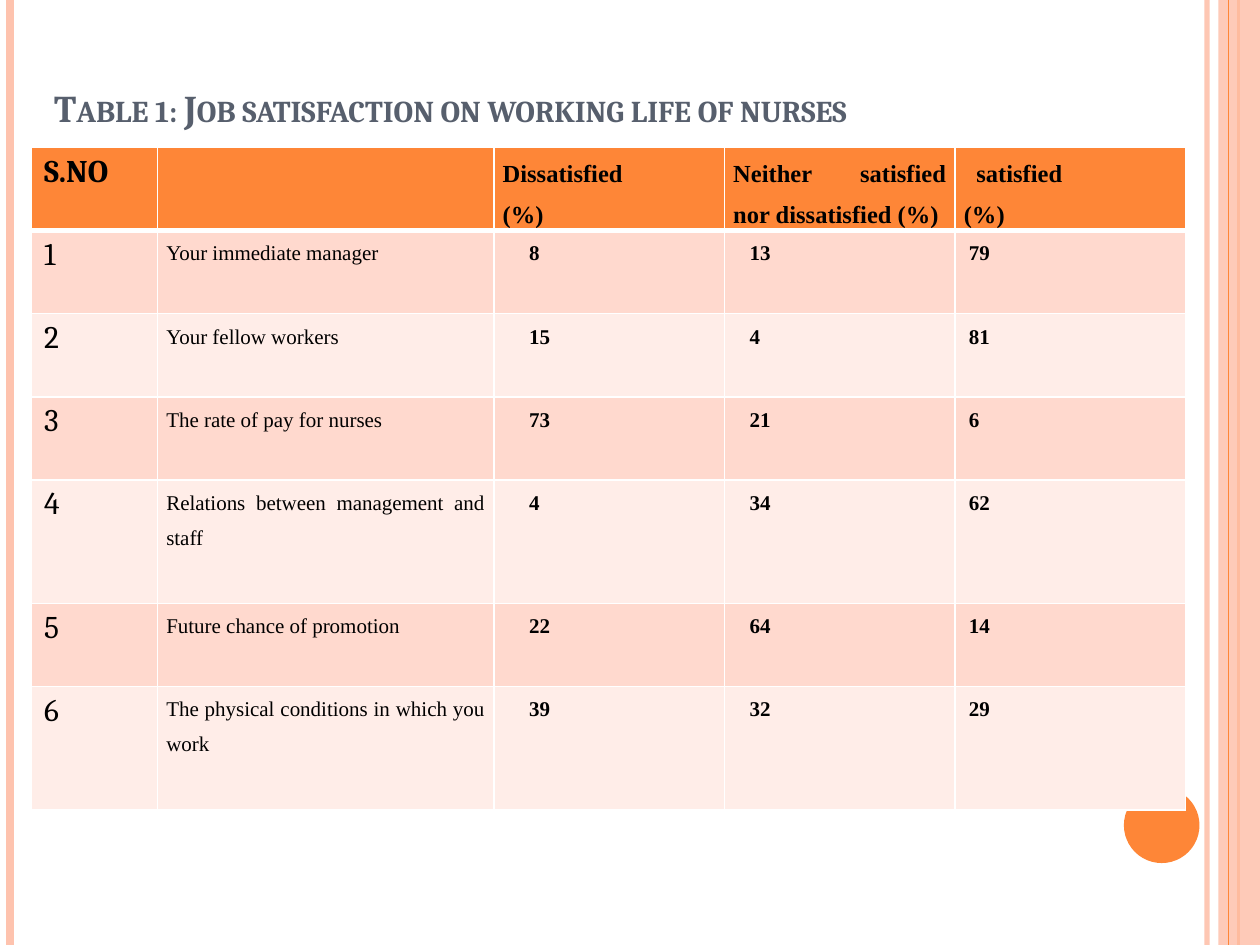
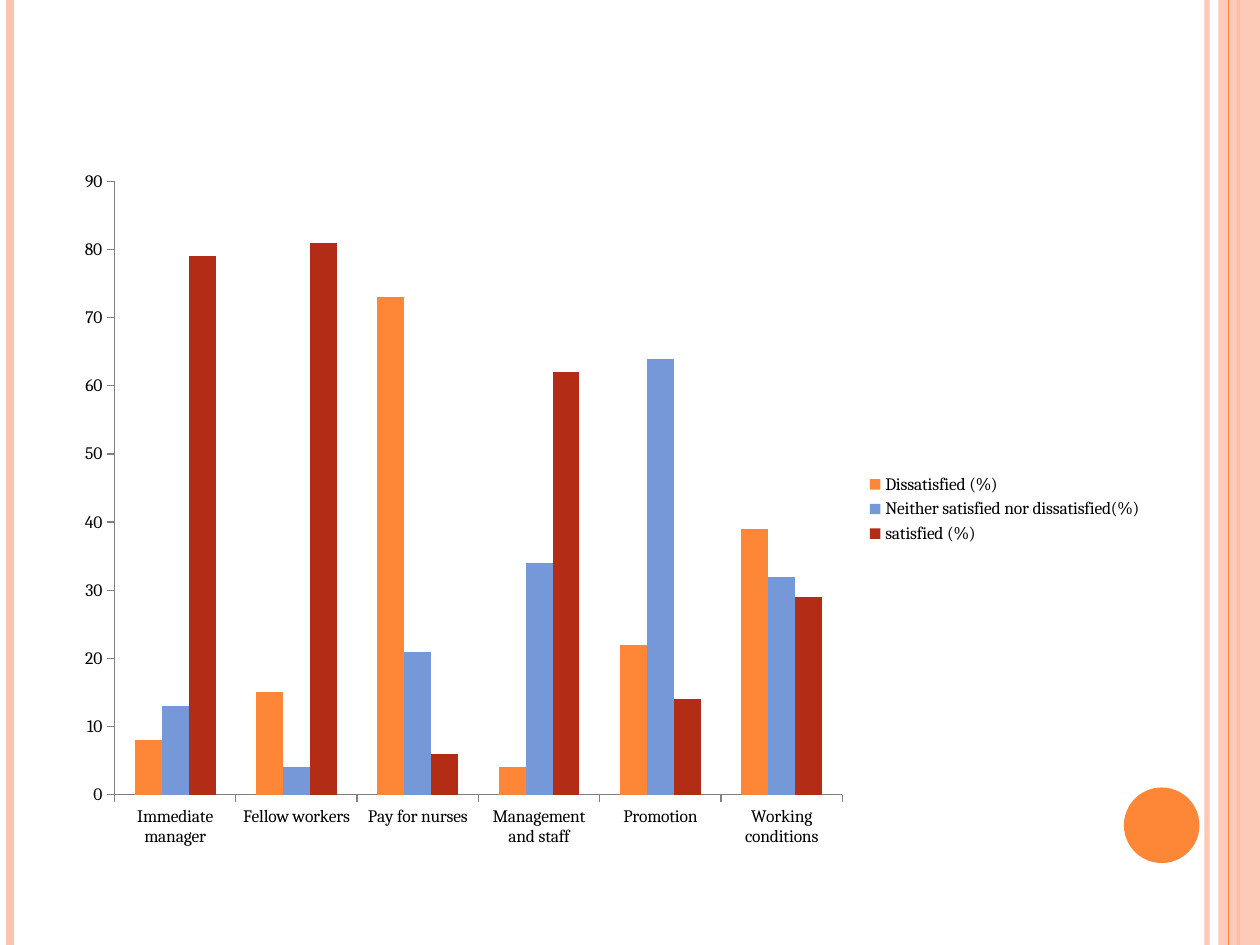
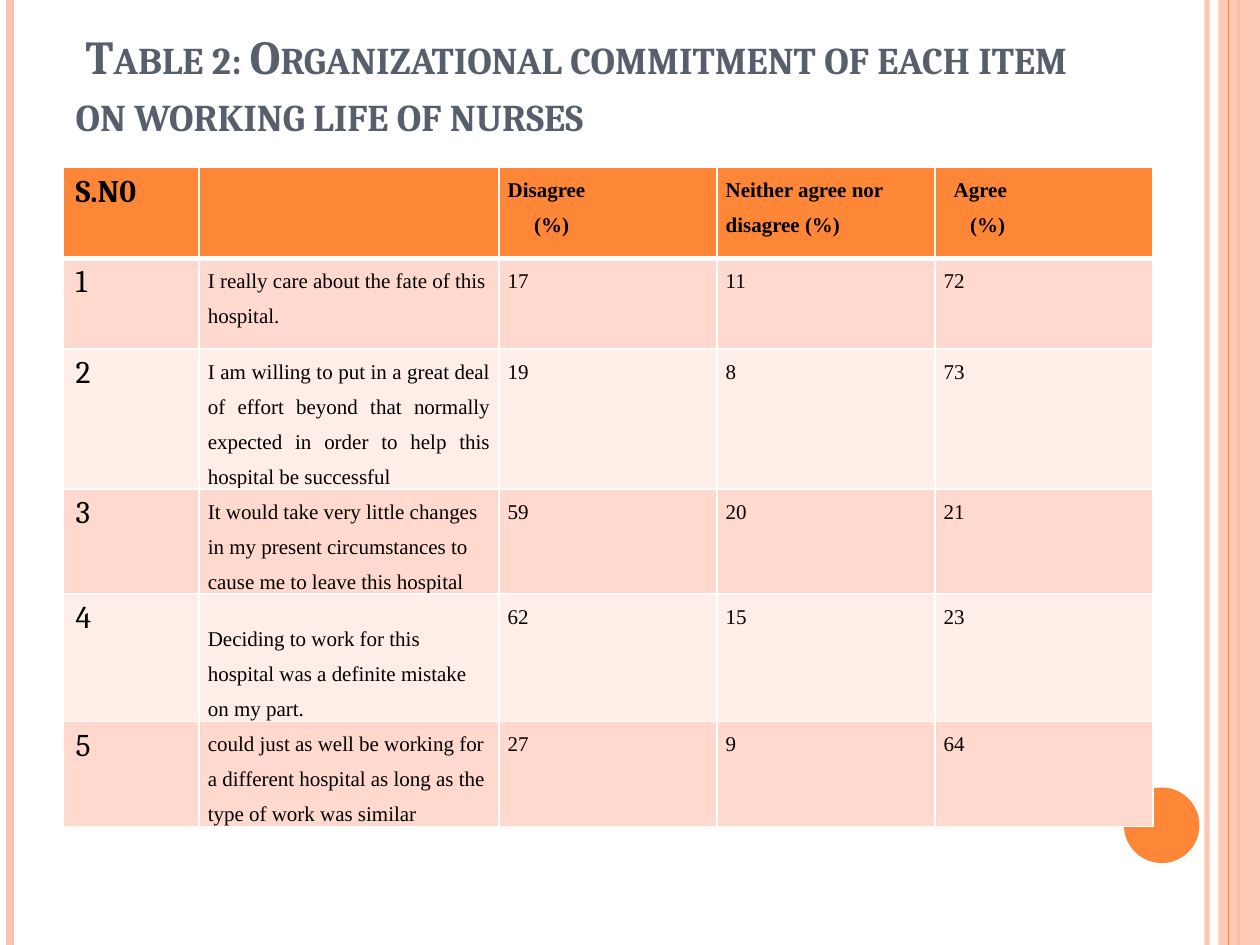
from lxml import etree
from pptx import Presentation
from pptx import util as u
from pptx.chart import data as chart_data
from pptx.dml import color
from pptx.enum import chart as charts
from pptx.enum import shapes, text
from pptx.oxml import ns

ORANGE, PEACH, SLATE = "FE8637", "FEC3AE", "575F6D"
BLUE, RED, GREY = "7598D9", "B32C16", "808080"
WHITE, BLACK = "FFFFFF", "000000"
ROW_FILLS = ("FFD9CE", "FFEDE8")
HEADING_FONT, TABLE_FONT = "Cambria", "Times New Roman"
TITLE_ONLY, BLANK = 5, 6

# Survey results: statement, short name, percentages
SATISFACTION = [
    ("Your immediate manager", "Immediate manager", (8, 13, 79)),
    ("Your fellow workers", "Fellow workers", (15, 4, 81)),
    ("The rate of pay for nurses", "Pay for nurses", (73, 21, 6)),
    ("Relations between management and staff", "Management and staff", (4, 34, 62)),
    ("Future chance of promotion", "Promotion", (22, 64, 14)),
    ("The physical conditions in which you work", "Working conditions", (39, 32, 29)),
]
COMMITMENT = [
    ("I really care about the fate of this hospital.", (17, 11, 72)),
    ("I am willing to put in a great deal of effort beyond that normally "
     "expected in order to help this hospital be successful", (19, 8, 73)),
    ("It would take very little changes in my present circumstances to "
     "cause me to leave this hospital", (59, 20, 21)),
    ("Deciding to work for this hospital was a definite mistake on my part.",
     (62, 15, 23)),
    ("could just as well be working for a different hospital as long as the "
     "type of work was similar", (27, 9, 64)),
]


def rgb(value):
    return color.RGBColor.from_string(value)


def set_alpha(element, percent):
    for solid in element.iter(ns.qn("a:srgbClr")):
        etree.SubElement(solid, ns.qn("a:alpha")).set("val", str(percent * 1000))


def set_font(font, name, size, fill=BLACK, bold=False):
    font.name, font.size, font.bold = name, u.Pt(size), bold
    font.color.rgb = rgb(fill)


def set_indent(paragraph, inches):
    properties = paragraph._p.get_or_add_pPr()
    properties.set("marL", "0")
    properties.set("indent", str(u.Inches(inches)))


class Deck:
    def __init__(self):
        self.presentation = Presentation()
        self.presentation.slide_width = u.Inches(10)
        self.presentation.slide_height = u.Inches(7.5)
        self.slide = None

    def start(self, layout):
        layouts = self.presentation.slide_layouts
        self.slide = self.presentation.slides.add_slide(layouts[layout])
        self.slide.background.fill.solid()
        self.slide.background.fill.fore_color.rgb = rgb(WHITE)
        # Side bands and the disc
        self.vertical_line(9.58, PEACH, 3, 93)
        self.vertical_line(0.08, PEACH, 4.5)
        self.vertical_line(9.83, ORANGE, 1.5)
        self.shape(shapes.MSO_SHAPE.RECTANGLE, 9.67, 0, 0.33, 7.5, PEACH, 87)
        self.vertical_line(9.75, ORANGE, 0.75)
        self.shape(shapes.MSO_SHAPE.OVAL, 8.92, 6.25, 0.6, 0.6, ORANGE)

    def vertical_line(self, x, fill, width, alpha=100):
        line = self.slide.shapes.add_connector(
            shapes.MSO_CONNECTOR.STRAIGHT,
            u.Inches(x), 0, u.Inches(x), self.presentation.slide_height)
        line.line.color.rgb = rgb(fill)
        line.line.width = u.Pt(width)
        properties = line._element.spPr
        etree.SubElement(properties, ns.qn("a:effectLst"))
        if alpha < 100:
            set_alpha(properties, alpha)

    def shape(self, kind, left, top, width, height, fill, alpha=100):
        shape = self.slide.shapes.add_shape(
            kind, u.Inches(left), u.Inches(top), u.Inches(width), u.Inches(height))
        shape.shadow.inherit = False
        shape.fill.solid()
        shape.fill.fore_color.rgb = rgb(fill)
        shape.line.fill.background()
        if alpha < 100:
            set_alpha(shape._element.spPr, alpha)

    def title(self, words, left, top, width, height, size, bottom=0.05, indent=0):
        title = self.slide.shapes.title
        title.left, title.top = u.Inches(left), u.Inches(top)
        title.width, title.height = u.Inches(width), u.Inches(height)
        frame = title.text_frame
        frame.text = words
        frame.word_wrap = True
        frame.auto_size = text.MSO_AUTO_SIZE.NONE
        frame.vertical_anchor = text.MSO_ANCHOR.BOTTOM
        frame.margin_bottom = u.Inches(bottom)
        paragraph = frame.paragraphs[0]
        paragraph.alignment = text.PP_ALIGN.LEFT
        set_indent(paragraph, indent)
        set_font(paragraph.font, HEADING_FONT, size, SLATE, True)
        paragraph.font._rPr.set("cap", "small")

    def table(self, left, top, columns, rows, header, body, header_size=12,
              indents=(0, 0, 0), bold=False, justified=(), offsets=None):
        """header holds the lines (text, indent) of each answer column."""
        frame = self.slide.shapes.add_table(
            len(rows), len(columns), u.Inches(left), u.Inches(top),
            u.Inches(sum(columns)), u.Inches(sum(rows)))
        table = frame.table
        for column, width in zip(table.columns, columns):
            column.width = u.Inches(width)
        for row, height in zip(table.rows, rows):
            row.height = u.Inches(height)
        for r, row in enumerate(table.rows):
            for c, cell in enumerate(row.cells):
                fill = ROW_FILLS[(r - 1) % 2] if r else ORANGE
                self.paint_cell(cell, fill, 3 if r == 1 else 1, 1 if r else 3)

        # Header row
        number_heading, *answers = header
        self.number_cell(table.cell(0, 0), number_heading, True)
        for c, lines in enumerate(answers, 2):
            self.text_cell(table.cell(0, c), lines, header_size, True, 0 in justified)

        # Numbered statements and their percentages
        for r, (statement, values) in enumerate(body, 1):
            justify = r in justified
            self.number_cell(table.cell(r, 0), str(r), False)
            self.text_cell(table.cell(r, 1), [(statement, 0)], 12, False, justify,
                           (offsets or {}).get(r, 0))
            for c, (value, indent) in enumerate(zip(values, indents), 2):
                self.text_cell(table.cell(r, c), [(str(value), indent)], 12, bold, justify)

    def paint_cell(self, cell, fill, top, bottom):
        properties = cell._tc.get_or_add_tcPr()
        for side, width in (("L", 1), ("R", 1), ("T", top), ("B", bottom)):
            border = etree.SubElement(properties, ns.qn("a:ln" + side), w=str(u.Pt(width)))
            solid = etree.SubElement(border, ns.qn("a:solidFill"))
            etree.SubElement(solid, ns.qn("a:srgbClr"), val=WHITE)
        cell.fill.solid()
        cell.fill.fore_color.rgb = rgb(fill)

    def number_cell(self, cell, words, bold):
        cell.text_frame.text = words
        set_font(cell.text_frame.paragraphs[0].font, HEADING_FONT, 18, bold=bold)

    def text_cell(self, cell, lines, size, bold, justify, offset=0):
        cell.margin_left = cell.margin_right = u.Inches(0.07)
        cell.margin_top, cell.margin_bottom = u.Inches(offset), 0
        frame = cell.text_frame
        frame.text = "\n".join(words for words, _ in lines)
        for paragraph, (_, indent) in zip(frame.paragraphs, lines):
            paragraph.alignment = text.PP_ALIGN.JUSTIFY if justify else text.PP_ALIGN.LEFT
            paragraph.line_spacing = 1.5
            set_indent(paragraph, indent)
            set_font(paragraph.font, TABLE_FONT, size, bold=bold)

    def column_chart(self, left, top, width, height, categories, series):
        data = chart_data.CategoryChartData()
        data.categories = categories
        for name, values, _ in series:
            data.add_series(name, values)
        chart = self.slide.shapes.add_chart(
            charts.XL_CHART_TYPE.COLUMN_CLUSTERED, u.Inches(left), u.Inches(top),
            u.Inches(width), u.Inches(height), data).chart
        set_font(chart.font, HEADING_FONT, 10)
        chart.has_title = False
        chart.has_legend = True
        chart.legend.position = charts.XL_LEGEND_POSITION.RIGHT
        chart.legend.include_in_layout = False
        plot = chart.plots[0]
        plot.gap_width, plot.overlap = 150, 0
        plot.vary_by_categories = False
        for drawn, (_, _, fill) in zip(plot.series, series):
            drawn.format.fill.solid()
            drawn.format.fill.fore_color.rgb = rgb(fill)
        for axis in (chart.category_axis, chart.value_axis):
            axis.has_major_gridlines = False
            axis.major_tick_mark = charts.XL_TICK_MARK.OUTSIDE
            axis.format.line.color.rgb = rgb(GREY)
        chart.value_axis.minimum_scale = 0
        chart.value_axis.maximum_scale = 90
        chart.value_axis.major_unit = 10


def main():
    deck = Deck()

    # Slide 1: job satisfaction table
    deck.start(TITLE_ONLY)
    deck.title("Table 1: Job satisfaction on working life of nurses",
               0.33, 0.33, 8.33, 1.17, 21.6, bottom=0.47)
    deck.table(
        0.25, 1.17, (1, 2.67, 1.83, 1.83, 1.83),
        (0.66, 0.66, 0.66, 0.66, 0.98, 0.66, 0.98),
        ("S.NO",
         [("Dissatisfied", 0), ("(%)", 0)],
         [("Neither satisfied nor dissatisfied (%)", 0)],
         [("satisfied", 0.1), ("(%)", 0)]),
        [(statement, values) for statement, _, values in SATISFACTION],
        header_size=14, indents=(0.21, 0.13, 0.04), bold=True, justified=range(7))

    # Slide 2: job satisfaction chart
    deck.start(BLANK)
    names = ("Dissatisfied (%)", "Neither satisfied nor dissatisfied(%)", "satisfied (%)")
    answers = zip(*(values for _, _, values in SATISFACTION))
    deck.column_chart(0.5, 1.25, 8.67, 5.58,
                      [short_name for _, short_name, _ in SATISFACTION],
                      list(zip(names, answers, (ORANGE, BLUE, RED))))

    # Slide 3: organizational commitment table
    deck.start(TITLE_ONLY)
    deck.title("Table 2: Organizational commitment of each item on working life of nurses",
               0.5, 0.3, 8.17, 0.87, 27, indent=0.08)
    deck.table(
        0.5, 1.33, (1.08, 2.38, 1.73, 1.73, 1.73), (0.72,) * 6,
        ("S.N0",
         [("Disagree", 0), ("(%)", 0.21)],
         [("Neither agree nor disagree (%)", 0)],
         [("Agree", 0.08), ("(%)", 0.21)]),
        COMMITMENT, justified=(2,), offsets={4: 0.18})

    deck.presentation.save("out.pptx")


if __name__ == "__main__":
    main()
